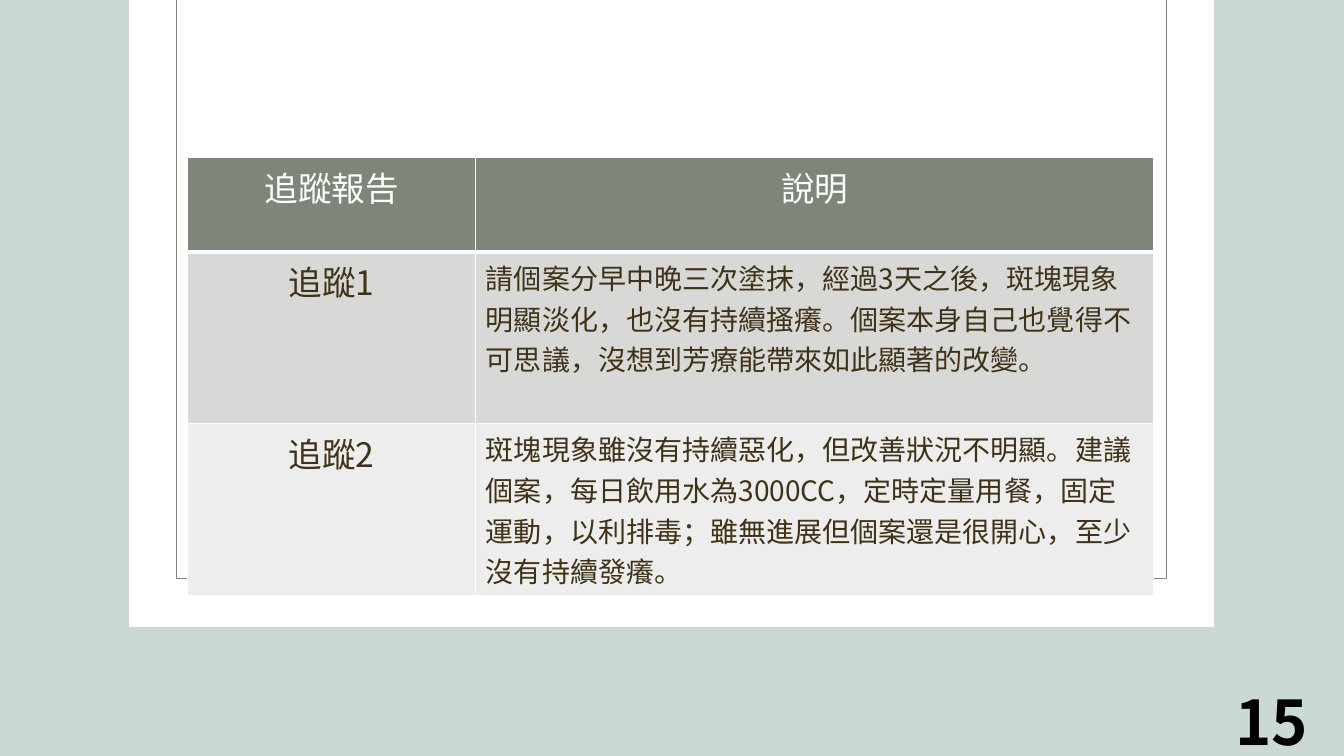
from lxml.etree import SubElement as Sub
from pptx import Presentation
from pptx.dml.color import RGBColor as RGB
from pptx.enum.shapes import MSO_SHAPE as Shape
from pptx.enum.text import MSO_ANCHOR as Anchor, PP_ALIGN as Align
from pptx.oxml.ns import qn
from pptx.util import Inches, Pt

COLORS = {
    "back": "CAD8D6", "white": "FFFFFF", "sage": "7E8679", "odd": "D8D9D7",
    "even": "ECEDEC", "brown": "403218", "black": "000000",
}
ROWS = [
    ("追蹤報告", "說明"),
    ("追蹤1", "請個案分早中晚三次塗抹，經過3天之後，斑塊現象明顯淡化，也沒有持續搔癢。"
     "個案本身自己也覺得不可思議，沒想到芳療能帶來如此顯著的改變。"),
    ("追蹤2", "斑塊現象雖沒有持續惡化，但改善狀況不明顯。建議個案，每日飲用水為3000CC，"
     "定時定量用餐，固定運動，以利排毒；雖無進展但個案還是很開心，至少沒有持續發癢。"),
]
WIDTHS = [2.86, 6.72]
HEIGHTS = [0.94, 1.7, 1.71]
FILLS = ["sage", "odd", "even"]


def style(para, face, size, color, align):
    """Set the look of a paragraph, for Latin and East Asian text alike."""
    para.alignment = align
    font = para.font
    font.size = Pt(size)
    font.color.rgb = RGB.from_string(COLORS[color])
    font.name = face
    Sub(para._p.pPr.find(qn("a:defRPr")), qn("a:ea"), typeface=face)


def edge(cell, side, width):
    line = Sub(cell._tc.get_or_add_tcPr(), qn(f"a:ln{side}"), w=str(Pt(width)))
    Sub(Sub(line, qn("a:solidFill")), qn("a:srgbClr"), val=COLORS["white"])


deck = Presentation()
deck.slide_width, deck.slide_height = Inches(13.33), Inches(7.5)
slide = deck.slides.add_slide(deck.slide_layouts[6])
slide.background.fill.solid()
slide.background.fill.fore_color.rgb = RGB.from_string(COLORS["back"])
shapes = slide.shapes

# White panel and thin frame
panel = shapes.add_shape(Shape.RECTANGLE, Inches(1.28), 0, Inches(10.76), Inches(6.22))
panel.shadow.inherit = False
panel.fill.solid()
panel.fill.fore_color.rgb = RGB.from_string(COLORS["white"])
panel.line.fill.background()

frame = shapes.add_shape(Shape.RECTANGLE, Inches(1.75), Inches(-0.01), Inches(9.82), Inches(5.75))
frame.shadow.inherit = False
frame.fill.background()
frame.line.color.rgb = RGB.from_string(COLORS["sage"])
frame.line.width = Pt(1)

# Page number
page = shapes.add_textbox(Inches(10.07), Inches(6.95), Inches(3), Inches(0.4)).text_frame
page.word_wrap = True
page.vertical_anchor = Anchor.MIDDLE
para = page.paragraphs[0]
para.text = "15"
style(para, "Noto Sans CJK TC", 44, "black", Align.RIGHT)
para.font.bold = True

# Follow-up table
table = shapes.add_table(len(ROWS), len(WIDTHS), Inches(1.86), Inches(1.56),
                         Inches(sum(WIDTHS)), Inches(sum(HEIGHTS))).table
for col, width in zip(table.columns, WIDTHS):
    col.width = Inches(width)
for r, texts in enumerate(ROWS):
    table.rows[r].height = Inches(HEIGHTS[r])
    for c, text in enumerate(texts):
        cell = table.cell(r, c)
        for side in "LRTB":
            thick = (r, side) in [(0, "B"), (1, "T")]
            edge(cell, side, 3 if thick else 1)
        cell.fill.solid()
        cell.fill.fore_color.rgb = RGB.from_string(COLORS[FILLS[r]])
        para = cell.text_frame.paragraphs[0]
        para.text = text
        note = r > 0 and c == 1
        style(para, "Noto Sans CJK JP", 20 if note else 24,
              "brown" if r else "white", Align.LEFT if note else Align.CENTER)

deck.save("out.pptx")
